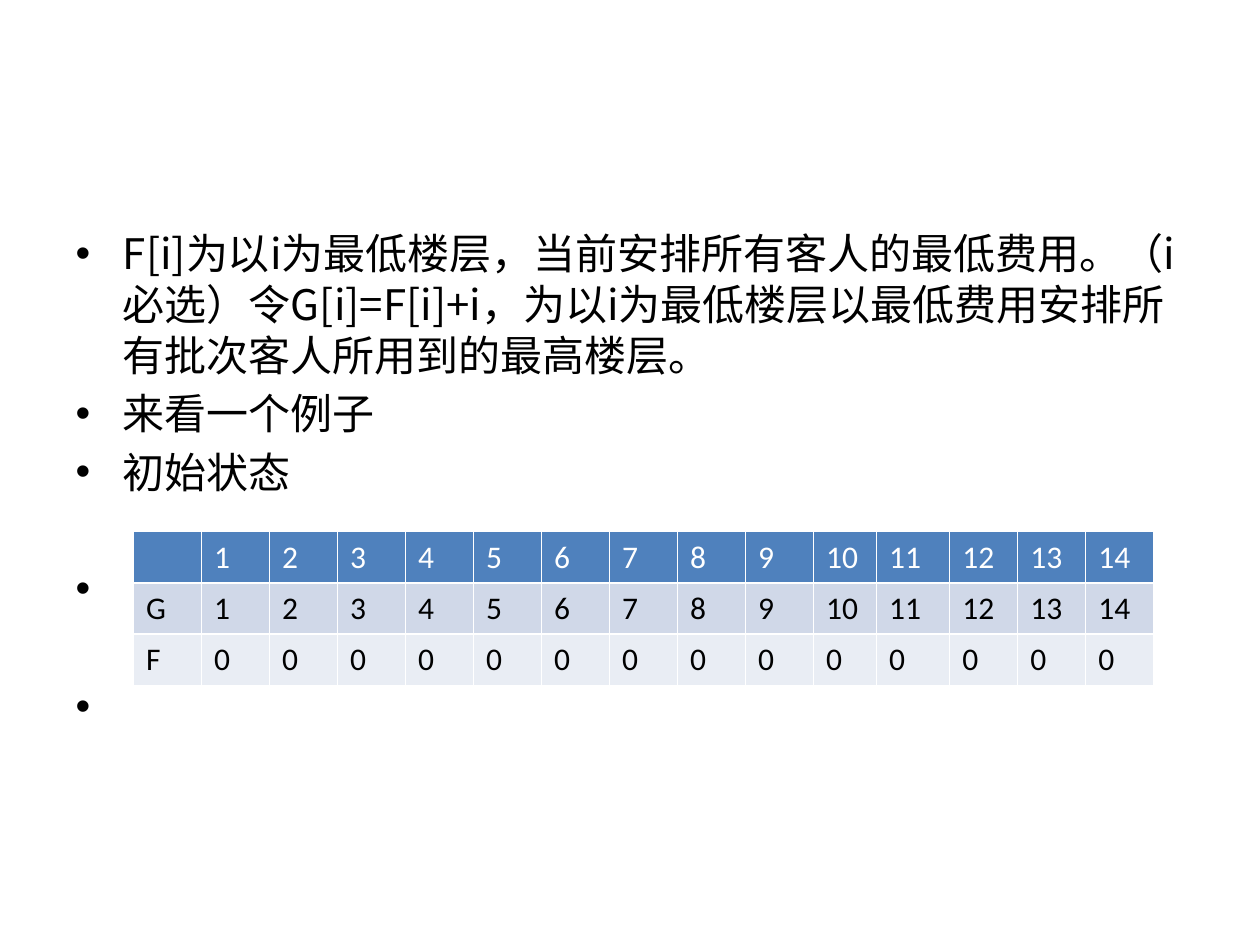
import pptx
import pptx.util
import pptx.dml.color
import pptx.enum.text
import pptx.oxml
import pptx.oxml.ns
from pptx.util import Inches


def colour(value):
    return pptx.dml.color.RGBColor.from_string(value)


def add_span(para, text, size, font, value):
    span = para.add_run()
    span.text = text
    span.font.size = pptx.util.Pt(size)
    span.font.name = font
    span.font.color.rgb = colour(value)
    east_asian = pptx.oxml.parse_xml(
        f'<a:ea {pptx.oxml.ns.nsdecls("a")} typeface="{font}"/>')
    span.font._element.append(east_asian)


deck = pptx.Presentation()
deck.slide_width, deck.slide_height = Inches(10), Inches(7.5)
page = deck.slides.add_slide(deck.slide_layouts[1])
title = page.shapes.title
title._element.getparent().remove(title._element)

# Bulleted explanation; the last two bullets stand without words
body = page.placeholders[1]
body.left, body.top = Inches(0.5), Inches(1.75)
body.width, body.height = Inches(9), Inches(4.95)
box = body.text_frame
box.word_wrap = True
box.auto_size = pptx.enum.text.MSO_AUTO_SIZE.NONE
bullets = [
    ("F[i]为以i为最低楼层，当前安排所有客人的最低费用。（i必选）令G[i]=F[i]+i，"
     "为以i为最低楼层以最低费用安排所有批次客人所用到的最高楼层。", 4.3),
    ("来看一个例子", 4.3),
    ("初始状态", 4.3),
    (" ", 37.8),
    (" ", 37.8),
]
for index, (text, gap) in enumerate(bullets):
    para = box.add_paragraph() if index else box.paragraphs[0]
    para.space_before = pptx.util.Pt(gap)
    para.line_spacing = pptx.util.Pt(29.1)
    add_span(para, text, 24, "Noto Sans CJK SC", "000000")

# Table of the starting state
floors = [str(floor) for floor in range(1, 15)]
rows = [
    ([""] + floors, "4F81BD", "FFFFFF"),
    (["G"] + floors, "D0D8E8", "000000"),
    (["F"] + ["0"] * len(floors), "E9EDF4", "000000"),
]
widths = [0.54] * 15
widths[10], widths[11] = 0.5, 0.58
table = page.shapes.add_table(len(rows), len(widths), Inches(1.06), Inches(4.22),
                              Inches(sum(widths)), Inches(1.22)).table
for column, width in zip(table.columns, widths):
    column.width = Inches(width)
for row_index, (values, fill, ink) in enumerate(rows):
    for column_index, value in enumerate(values):
        cell = table.cell(row_index, column_index)
        cell.fill.solid()
        cell.fill.fore_color.rgb = colour(fill)
        if value:
            add_span(cell.text_frame.paragraphs[0], value, 18, "Calibri", ink)

deck.save("out.pptx")
